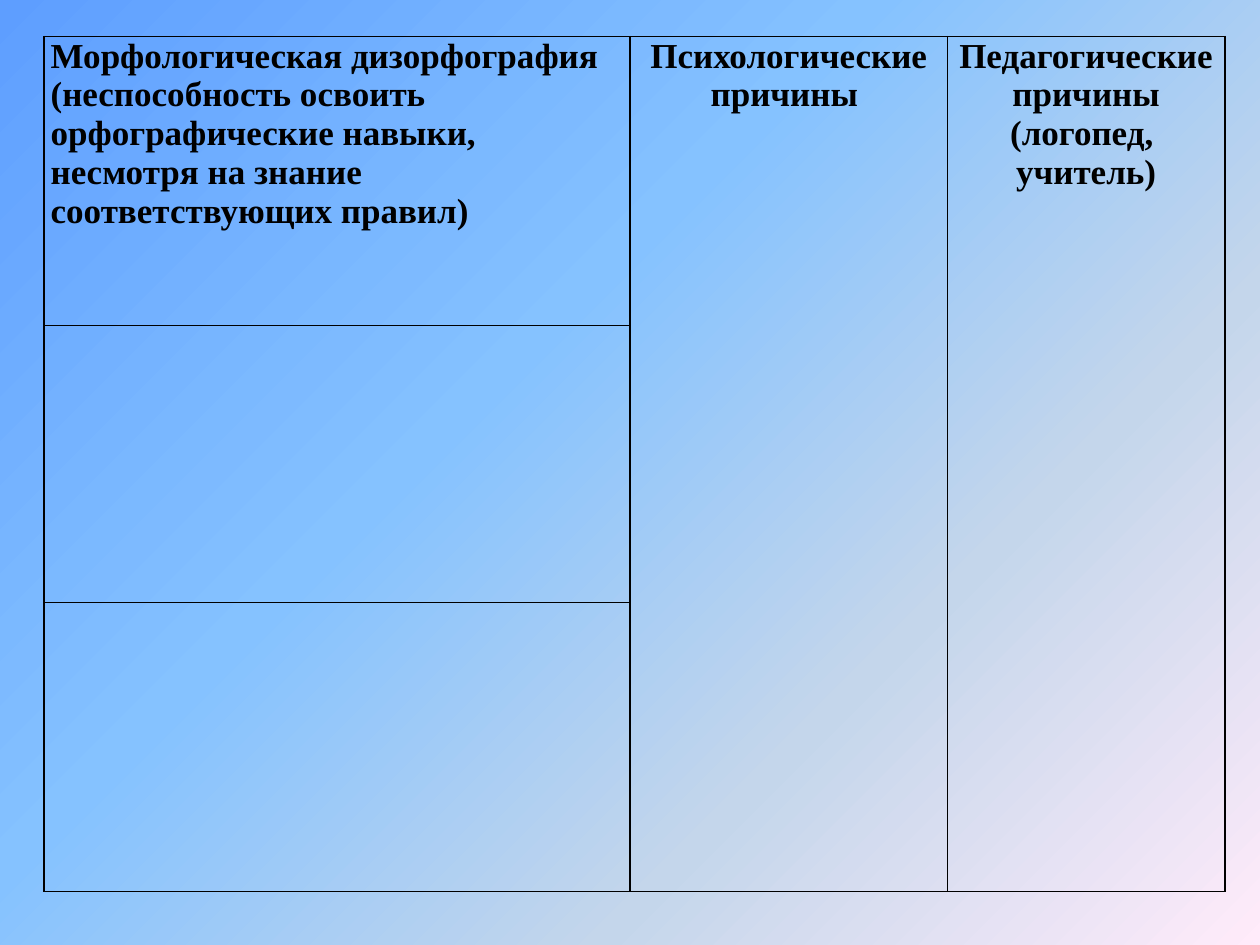
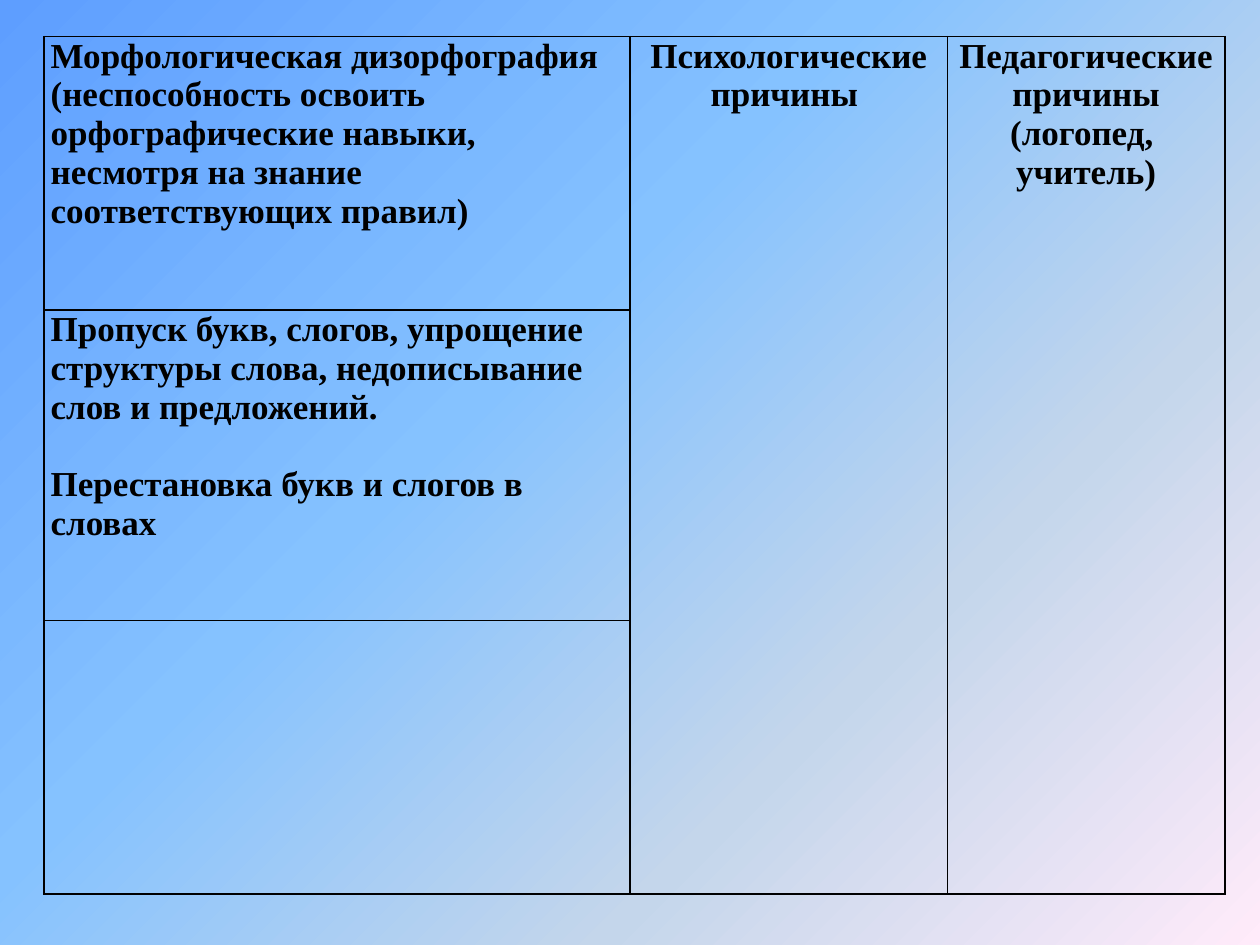
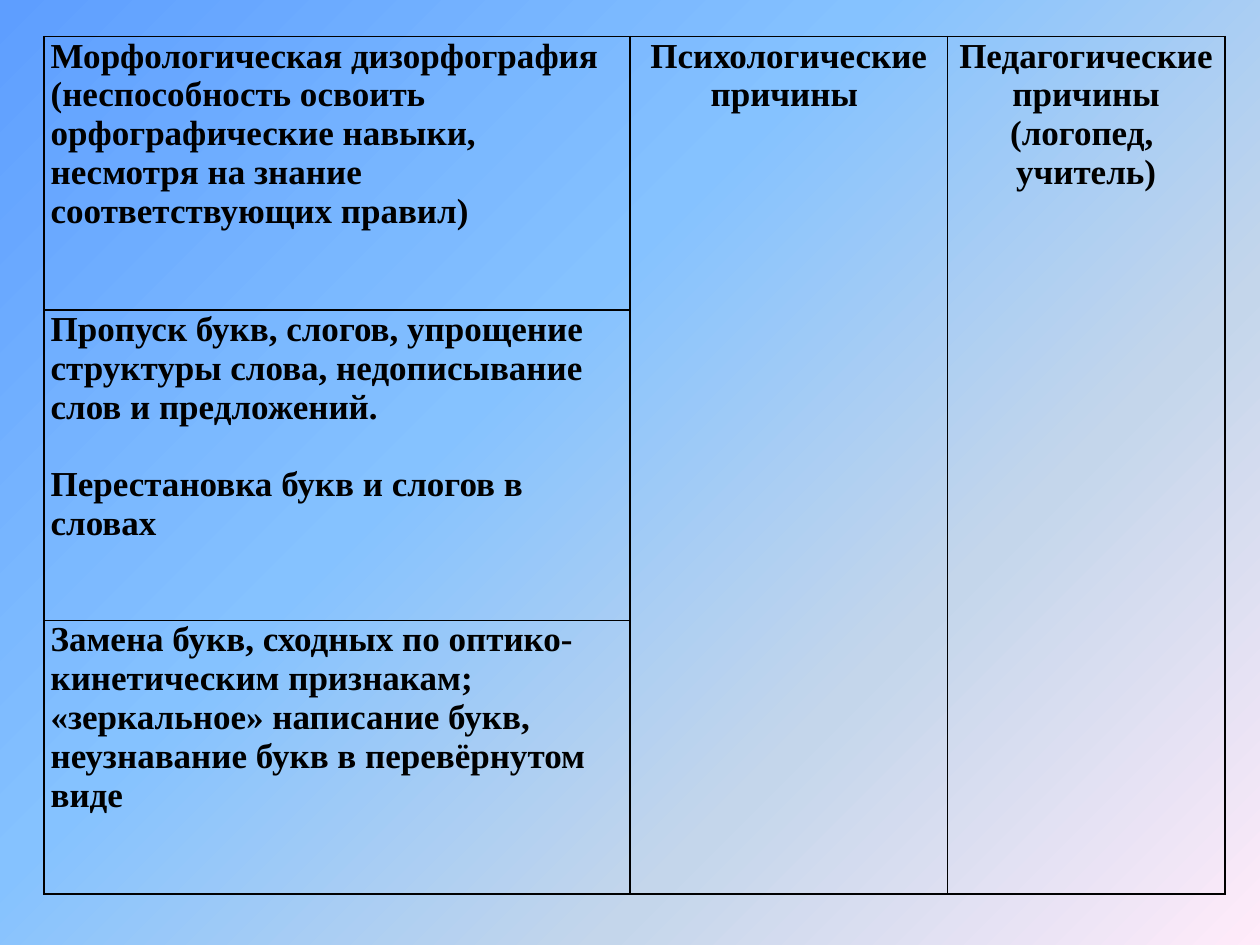
import pptx
import pptx.dml.color
import pptx.enum.text
import pptx.oxml.ns
import pptx.util
from lxml import etree
from pptx.util import Cm

RGBColor = pptx.dml.color.RGBColor
qn = pptx.oxml.ns.qn

BLACK = RGBColor(0x00, 0x00, 0x00)
BACKGROUND_STOPS = [
    (0, RGBColor(0x5E, 0x9E, 0xFF)),
    (40, RGBColor(0x85, 0xC2, 0xFF)),
    (70, RGBColor(0xC4, 0xD6, 0xEB)),
    (100, RGBColor(0xFF, 0xEB, 0xFA)),
]
FONT_NAME = "Times New Roman"
FONT_SIZE = pptx.util.Pt(20)
PARAGRAPH_GAP = pptx.util.Pt(22)
BORDER_WIDTH = pptx.util.Pt(1)
TABLE_LEFT, TABLE_TOP = Cm(0.89), Cm(0.74)
COLUMN_WIDTHS = [Cm(11.81), Cm(6.4), Cm(5.59)]
EMPTY_ROWS = [Cm(5.82), Cm(5.59), Cm(5.82)]
FILLED_ROWS = [Cm(5.51), Cm(6.26), Cm(5.51)]

DISORDER = (
    "Морфологическая дизорфография (неспособность освоить орфографические "
    "навыки, несмотря на знание соответствующих правил)"
)
CAUSES = ["Психологические причины ", "Педагогические причины (логопед,  учитель)"]
OMISSIONS = [
    "Пропуск букв, слогов, упрощение структуры слова, недописывание слов и предложений.",
    "Перестановка букв и слогов в словах",
]
SUBSTITUTIONS = [
    "Замена букв, сходных по оптико-кинетическим признакам; «зеркальное» "
    "написание букв, неузнавание букв в перевёрнутом виде"
]
# Row heights, then the paragraphs of the second and third rows
SLIDES = [
    (EMPTY_ROWS, [], []),
    (FILLED_ROWS, OMISSIONS, []),
    (FILLED_ROWS, OMISSIONS, SUBSTITUTIONS),
]


def format_cell(cell):
    """Make the cell transparent, with narrow margins and black borders."""
    cell.margin_left = cell.margin_right = Cm(0.13)
    cell.margin_top = cell.margin_bottom = 0
    cell.fill.background()
    properties = cell._tc.get_or_add_tcPr()
    for position, side in enumerate(["a:lnL", "a:lnR", "a:lnT", "a:lnB"]):
        border = etree.Element(qn(side), w=str(BORDER_WIDTH))
        border_fill = etree.SubElement(border, qn("a:solidFill"))
        etree.SubElement(border_fill, qn("a:srgbClr"), val=str(BLACK))
        properties.insert(position, border)


def write_cell(cell, texts, alignment):
    for index, text in enumerate(texts):
        if index == 0:
            paragraph = cell.text_frame.paragraphs[0]
        else:
            paragraph = cell.text_frame.add_paragraph()
            paragraph.space_before = PARAGRAPH_GAP
        paragraph.alignment = alignment
        run = paragraph.add_run()
        run.text = text
        run.font.name = FONT_NAME
        run.font.size = FONT_SIZE
        run.font.bold = True
        run.font.color.rgb = BLACK


presentation = pptx.Presentation()
presentation.slide_width = Cm(25.4)
presentation.slide_height = Cm(19.05)

# Shared diagonal gradient on the master
master = presentation.slide_master
background_fill = master.background.fill
background_fill.gradient()
background_fill.gradient_angle = 315
stop_list = next(master.element.iter(qn("a:gsLst")))
for stop in list(stop_list):
    stop_list.remove(stop)
for percent, color in BACKGROUND_STOPS:
    stop = etree.SubElement(stop_list, qn("a:gs"), pos=str(percent * 1000))
    etree.SubElement(stop, qn("a:srgbClr"), val=str(color))

LEFT = pptx.enum.text.PP_ALIGN.LEFT
CENTER = pptx.enum.text.PP_ALIGN.CENTER

for row_heights, second_row, third_row in SLIDES:
    slide = presentation.slides.add_slide(presentation.slide_layouts[6])
    table = slide.shapes.add_table(
        len(row_heights), len(COLUMN_WIDTHS), TABLE_LEFT, TABLE_TOP,
        sum(COLUMN_WIDTHS), sum(row_heights),
    ).table
    table.first_row = False
    table.horz_banding = False
    for column, width in zip(table.columns, COLUMN_WIDTHS):
        column.width = width
    for row, height in zip(table.rows, row_heights):
        row.height = height
    for cell in table.iter_cells():
        format_cell(cell)

    for row_index, texts in enumerate([[DISORDER], second_row, third_row]):
        write_cell(table.cell(row_index, 0), texts, LEFT)
    for column_index, cause in enumerate(CAUSES, start=1):
        cause_cell = table.cell(0, column_index)
        cause_cell.merge(table.cell(len(row_heights) - 1, column_index))
        write_cell(cause_cell, [cause], CENTER)

presentation.save("out.pptx")
